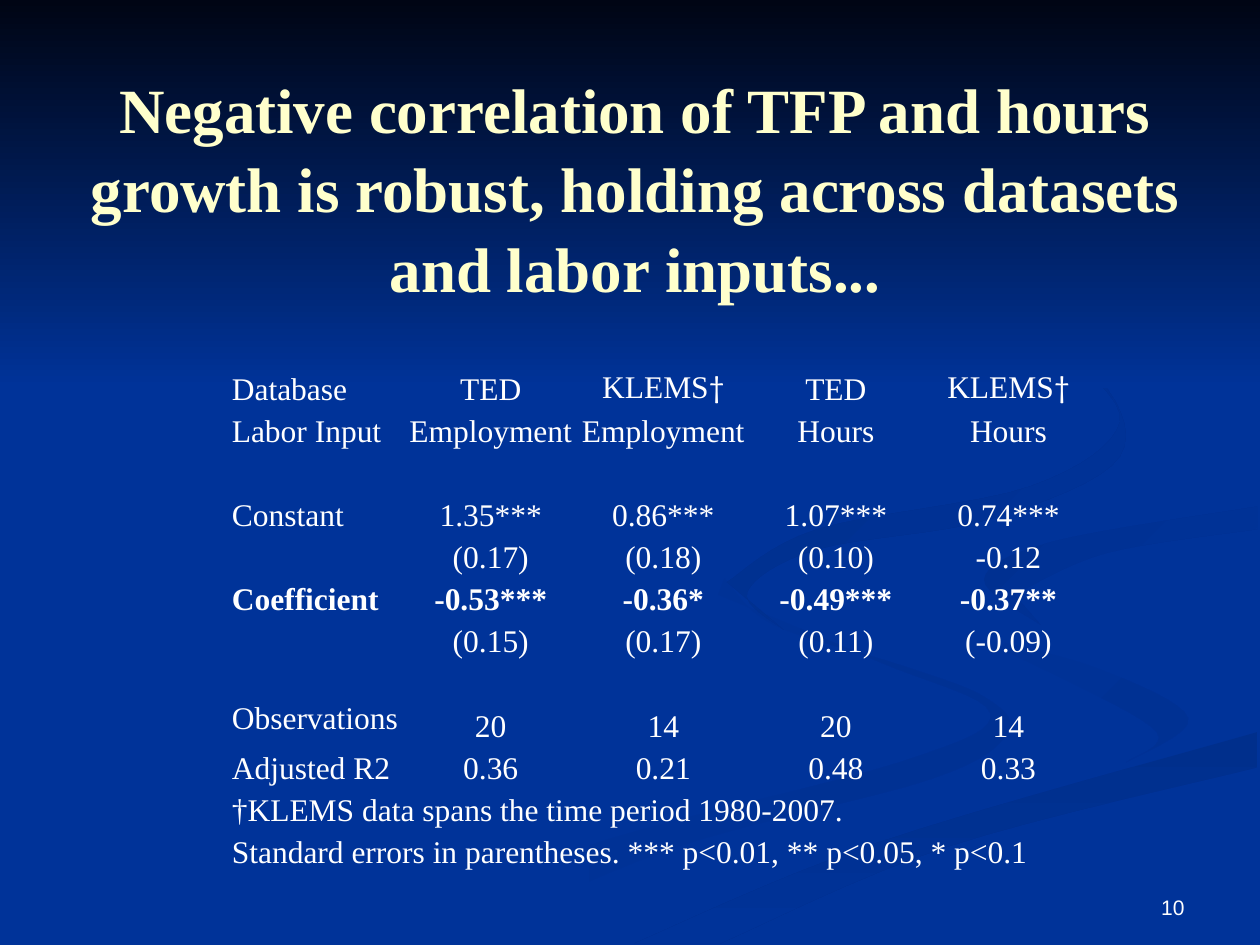
from dataclasses import dataclass

from pptx import Presentation
from pptx.dml.color import RGBColor
from pptx.enum.shapes import MSO_SHAPE
from pptx.enum.text import MSO_ANCHOR, PP_ALIGN
from pptx.util import Inches, Pt

LEFT, CENTER, RIGHT = PP_ALIGN.LEFT, PP_ALIGN.CENTER, PP_ALIGN.RIGHT
TOP, MIDDLE, BOTTOM = MSO_ANCHOR.TOP, MSO_ANCHOR.MIDDLE, MSO_ANCHOR.BOTTOM
RECTANGLE = MSO_SHAPE.RECTANGLE
SERIF, SANS, SYMBOL = "Times New Roman", "Arial", "Calibri"
NO_GRID_STYLE = "{2D5ABB26-0587-4C30-8999-92F81FD0307C}"
COLORS = {
    "blue": "003399",
    "night": "000514",
    "shade": "003193",
    "deep": "002F8C",
    "dusk": "003091",
    "title": "FFFFCC",
    "text": "FFFFFF",
}
Point = tuple[float, float]


@dataclass
class Ribbon:
    start: str
    end: str
    angle: int
    outer: list[Point]
    inner: list[Point]


RIBBONS = [
    Ribbon("blue", "shade", 0,
           [(5.75, 4.59), (6.14, 4.96), (7.15, 5.28), (7.81, 5.53),
            (8, 5.81), (7.4, 6.18), (5.32, 6.74), (3.61, 7.49)],
           [(3, 7.49), (4.58, 6.74), (7.14, 6.05), (7.86, 5.66), (6.97, 5.25), (5.7, 4.72)]),
    Ribbon("blue", "shade", 45,
           [(7.24, 4.64), (7.58, 4.98), (8.7, 5.3), (9.43, 5.7), (8.94, 6.05)],
           [(8.94, 6.05), (9.18, 5.81), (8.38, 5.36), (7.33, 4.88)]),
    Ribbon("deep", "blue", 90,
           [(5.03, 7.49), (6.96, 6.69), (9.98, 5.81)],
           [(9.98, 6.09), (7.52, 6.72), (5.71, 7.49)]),
    Ribbon("dusk", "blue", 45,
           [(9.98, 4.02), (8.35, 4.3), (7.81, 4.6), (8.26, 4.96)],
           [(8.05, 4.72), (8.78, 4.39), (9.98, 4.2)]),
    Ribbon("deep", "blue", 45,
           [(7.62, 2.33), (8.64, 2.91), (8.89, 3.62), (7.86, 4.12),
            (6.49, 4.36), (5.93, 4.7), (6.22, 5)],
           [(5.77, 4.62), (6.49, 4.2), (8.18, 3.86), (8.89, 3.35), (8.46, 2.79)]),
]
CURVE_STEPS = 8

ROWS = [
    [],
    ["Database", "TED", "KLEMS†", "TED", "KLEMS†"],
    ["Labor Input", "Employment", "Employment", "Hours", "Hours"],
    [],
    ["Constant", "1.35***", "0.86***", "1.07***", "0.74***"],
    ["", "(0.17)", "(0.18)", "(0.10)", "-0.12"],
    ["Coefficient", "-0.53***", "-0.36*", "-0.49***", "-0.37**"],
    ["", "(0.15)", "(0.17)", "(0.11)", "(-0.09)"],
    [],
    ["Observations", "20", "14", "20", "14"],
    ["Adjusted R2", "0.36", "0.21", "0.48", "0.33"],
    ["†KLEMS data spans the time period 1980-2007."],
    ["Standard errors in parentheses. *** p<0.01, ** p<0.05, * p<0.1"],
]
SPANNING_ROWS = (0, 11, 12)
COLUMNS = 5
COLUMN_WIDTH = 1.37
FIRST_HEIGHTS = [0.25, 0.32]
TABLE_HEIGHT = 4.25


def rgb(name: str) -> RGBColor:
    return RGBColor.from_string(COLORS[name])


def format_run(r, size: float, color: str = "text", font: str = SERIF, bold: bool = False) -> None:
    r.font.size = Pt(size)
    r.font.name = font
    r.font.bold = bold
    r.font.color.rgb = rgb(color)


def spline(a: float, b: float, c: float, d: float, t: float) -> float:
    return b + t / 2 * (c - a + t * (2 * a - 5 * b + 4 * c - d + t * (3 * (b - c) + d - a)))


def smooth(edge: list[Point]) -> list[Point]:
    padded = [edge[0], *edge, edge[-1]]
    curve = [
        tuple(spline(*values, step / CURVE_STEPS) for values in zip(*padded[i:i + 4]))
        for i in range(len(edge) - 1)
        for step in range(CURVE_STEPS)
    ]
    return curve + [edge[-1]]


def paint_gradient(sp, start: str, end: str, angle: int) -> None:
    sp.shadow.inherit = False
    sp.line.fill.background()
    sp.fill.gradient()
    sp.fill.gradient_angle = (360 - angle) % 360
    for stop, color in zip(sp.fill.gradient_stops, (start, end)):
        stop.color.rgb = rgb(color)


def draw_ribbon(s, ribbon: Ribbon) -> None:
    outline = smooth(ribbon.outer) + smooth(ribbon.inner)
    points = [(Inches(x), Inches(y)) for x, y in outline]
    builder = s.shapes.build_freeform(*points[0], scale=1.0)
    builder.add_line_segments(points[1:], close=True)
    paint_gradient(builder.convert_to_shape(), ribbon.start, ribbon.end, ribbon.angle)


def fill_cell(cell, text: str, align, bold: bool) -> None:
    cell.margin_left = cell.margin_right = cell.margin_top = cell.margin_bottom = 0
    cell.vertical_anchor = TOP if text == "Observations" else BOTTOM
    cell.fill.background()
    p = cell.text_frame.paragraphs[0]
    p.alignment = align
    if not text:
        p._p.get_or_add_endParaRPr().set("sz", "1000")
    parts = ["KLEMS", "†"] if text == "KLEMS†" else [text] if text else []
    for part in parts:
        r = p.add_run()
        r.text = part
        format_run(r, 18, font=SYMBOL if part == "†" else SERIF, bold=bold)


def draw_table(s) -> None:
    table = s.shapes.add_table(
        len(ROWS), COLUMNS, Inches(1.84), Inches(2.66),
        Inches(COLUMNS * COLUMN_WIDTH), Inches(TABLE_HEIGHT)).table
    table.first_row = table.horz_banding = False
    table._tbl.tblPr[0].text = NO_GRID_STYLE
    for column in table.columns:
        column.width = Inches(COLUMN_WIDTH)
    rest = len(ROWS) - len(FIRST_HEIGHTS)
    heights = FIRST_HEIGHTS + [(TABLE_HEIGHT - sum(FIRST_HEIGHTS)) / rest] * rest
    for i, (texts, height) in enumerate(zip(ROWS, heights)):
        table.rows[i].height = Inches(height)
        for j in range(COLUMNS):
            text = texts[j] if j < len(texts) else ""
            fill_cell(table.cell(i, j), text, CENTER if j else LEFT, texts[:1] == ["Coefficient"])
        if i in SPANNING_ROWS:
            table.cell(i, 0).merge(table.cell(i, COLUMNS - 1))


def set_text(sp, text: str, anchor, align, size: float, color: str, font: str, bold: bool) -> None:
    tf = sp.text_frame
    tf.word_wrap = True
    tf.vertical_anchor = anchor
    tf.text = text
    p = tf.paragraphs[0]
    p.alignment = align
    format_run(p.runs[0], size, color, font, bold)


def main() -> None:
    prs = Presentation()
    prs.slide_width, prs.slide_height = Inches(10), Inches(7.5)
    s = prs.slides.add_slide(prs.slide_layouts[5])
    s.background.fill.solid()
    s.background.fill.fore_color.rgb = rgb("blue")
    for ribbon in RIBBONS:
        draw_ribbon(s, ribbon)
    sky = s.shapes.add_shape(RECTANGLE, 0, 0, prs.slide_width, Inches(3.08))
    paint_gradient(sky, "night", "blue", 90)
    title = s.shapes.title
    s.shapes._spTree.append(title._element)
    title.left, title.top, title.width, title.height = map(Inches, (0.54, 0.49, 9, 1.97))
    set_text(title, "Negative correlation of TFP and hours growth is robust, "
             "holding across datasets and labor inputs...", MIDDLE, CENTER, 36, "title", SERIF, True)
    title.text_frame.paragraphs[0].line_spacing = 1.05
    number = s.shapes.add_textbox(Inches(7.17), Inches(6.83), Inches(2.33), Inches(0.52))
    set_text(number, "10", BOTTOM, RIGHT, 12, "text", SANS, False)
    draw_table(s)
    prs.save("out.pptx")


if __name__ == "__main__":
    main()
